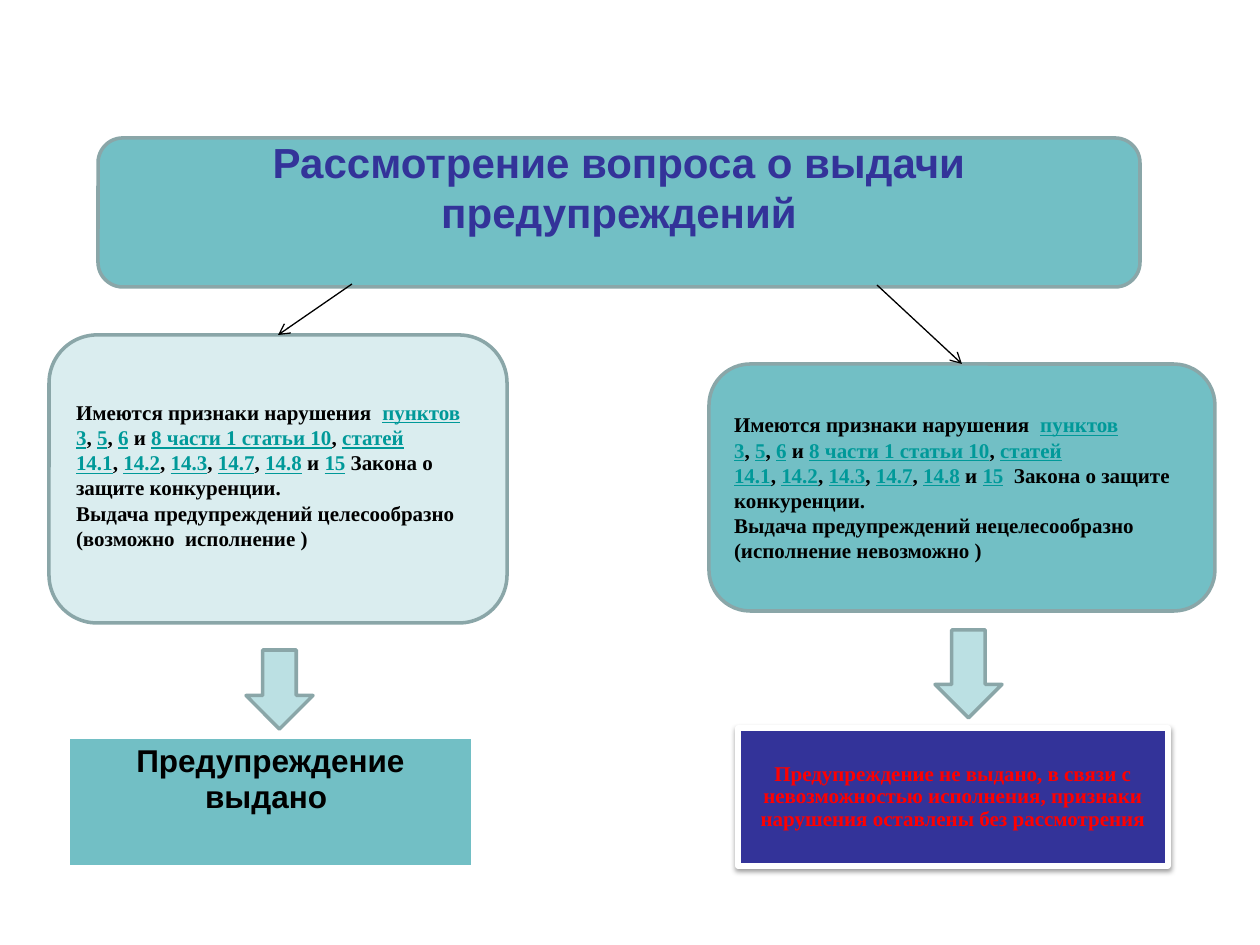
"""Build the slide on how warnings are considered and issued."""
from lxml.etree import SubElement
from pptx import Presentation
from pptx.dml.color import RGBColor
from pptx.enum.shapes import MSO_CONNECTOR, MSO_SHAPE
from pptx.enum.text import MSO_ANCHOR, PP_ALIGN
from pptx.oxml import parse_xml
from pptx.oxml.ns import nsdecls, qn
from pptx.util import Pt

PX = 914400 / 126
NO_BREAK_SPACE = chr(160)
TEAL = RGBColor(0x72, 0xBF, 0xC5)
PALE = RGBColor(0xDA, 0xED, 0xEF)
ARROW = RGBColor(0xBB, 0xE0, 0xE3)
OUTLINE = RGBColor(0x8A, 0xA6, 0xA8)
INDIGO = RGBColor(0x33, 0x33, 0x99)
LINK = RGBColor(0x00, 0x99, 0x99)
BLACK = RGBColor(0x00, 0x00, 0x00)
RED = RGBColor(0xFF, 0x00, 0x00)
WHITE = RGBColor(0xFF, 0xFF, 0xFF)


def px(*lengths):
    return [round(length * PX) for length in lengths]


def write(frame, text, size=12, font="Times New Roman", color=BLACK,
          align=PP_ALIGN.LEFT, spacing=1.0):
    for row, line in enumerate(text.replace("_", NO_BREAK_SPACE).split("\n")):
        paragraph = frame.add_paragraph() if row else frame.paragraphs[0]
        paragraph.alignment = align
        paragraph.line_spacing = spacing
        for index, piece in enumerate(line.split("|")):
            run = paragraph.add_run()
            run.text = piece
            run.font.size = Pt(size)
            run.font.name = font
            run.font.bold = True
            run.font.underline = index % 2 == 1
            run.font.color.rgb = LINK if index % 2 else color


prs = Presentation()
prs.slide_width, prs.slide_height = px(1260, 945)
slide = prs.slides.add_slide(prs.slide_layouts[6])
shapes = slide.shapes

issued = shapes.add_table(1, 1, *px(69, 738, 403, 129)).table.cell(0, 0)
write(issued.text_frame, "Предупреждение выдано ", size=18, font="Arial",
      align=PP_ALIGN.CENTER)
borders = issued._tc.get_or_add_tcPr()
for side, width in (("L", 1), ("R", 1), ("T", 1), ("B", 3)):
    border = SubElement(borders, qn(f"a:ln{side}"), w=str(Pt(width)))
    SubElement(SubElement(border, qn("a:solidFill")), qn("a:srgbClr"), val=str(WHITE))
issued.fill.solid()
issued.fill.fore_color.rgb = TEAL

grounds = (
    "Имеются признаки нарушения _|пунктов 3|,_|5|,_|6|_и_|8 части 1 статьи 10|,_"
    "|статей 14.1|,_|14.2|,_|14.3|,_|14.7|,_|14.8|_и_|15|_"
)
feasible = (grounds + "Закона о защите конкуренции.\n"
            "Выдача предупреждений целесообразно  (возможно  исполнение )")
infeasible = (grounds + " Закона о защите конкуренции.\n"
              "Выдача предупреждений нецелесообразно  (исполнение невозможно )")
title = "Рассмотрение вопроса о выдачи предупреждений"
refused = ("Предупреждение не выдано, в связи с невозможностью исполнения, "
           "признаки нарушения оставлены без рассмотрения")
heading = {"size": 24, "font": "Arial", "color": INDIGO, "align": PP_ALIGN.CENTER}
refusal = {"color": RED, "align": PP_ALIGN.CENTER, "spacing": 0.9}
ROUND, RECT, DOWN = (MSO_SHAPE.ROUNDED_RECTANGLE, MSO_SHAPE.RECTANGLE,
                     MSO_SHAPE.DOWN_ARROW)

for kind, box, fill, line, weight, insets, text, style in (
    (ROUND, (98, 138, 1042, 149), TEAL, OUTLINE, 2, (13, 0, 13, 52), title, heading),
    (ROUND, (49, 335, 458, 288), PALE, OUTLINE, 2, (13, 6, 13, 14), feasible, {}),
    (ROUND, (709, 364, 506, 247), TEAL, OUTLINE, 2, (13, 6, 13, 6), infeasible, {}),
    (RECT, (738, 728, 430, 138), INDIGO, WHITE, 3, (6, 6, 6, 6), refused, refusal),
    (DOWN, (935, 630, 67, 88), ARROW, OUTLINE, 2, (0, 0, 0, 0), "", {}),
    (DOWN, (246, 650, 67, 79), ARROW, OUTLINE, 2, (0, 0, 0, 0), "", {}),
):
    block = shapes.add_shape(kind, *px(*box))
    block.shadow.inherit = False
    block.fill.solid()
    block.fill.fore_color.rgb = fill
    block.line.color.rgb = line
    block.line.width = Pt(weight)
    frame = block.text_frame
    frame.word_wrap = True
    frame.vertical_anchor = MSO_ANCHOR.MIDDLE
    (frame.margin_left, frame.margin_top,
     frame.margin_right, frame.margin_bottom) = px(*insets)
    if text:
        write(frame, text, **style)
    if kind == RECT:
        block._element.spPr.find(qn("a:effectLst")).append(parse_xml(
            f'<a:outerShdw {nsdecls("a")} blurRad="40000" dist="20000" dir="5400000" '
            'rotWithShape="0"><a:srgbClr val="000000"><a:alpha val="38000"/>'
            '</a:srgbClr></a:outerShdw>'))

for ends in ((352, 284, 278, 335), (877, 285, 962, 364)):
    branch = shapes.add_connector(MSO_CONNECTOR.STRAIGHT, *px(*ends))
    branch.line.color.rgb = BLACK
    branch.line.width = Pt(0.75)
    SubElement(branch.line._get_or_add_ln(), qn("a:tailEnd"), type="arrow")
    SubElement(branch._element.spPr, qn("a:effectLst"))

prs.save("out.pptx")
